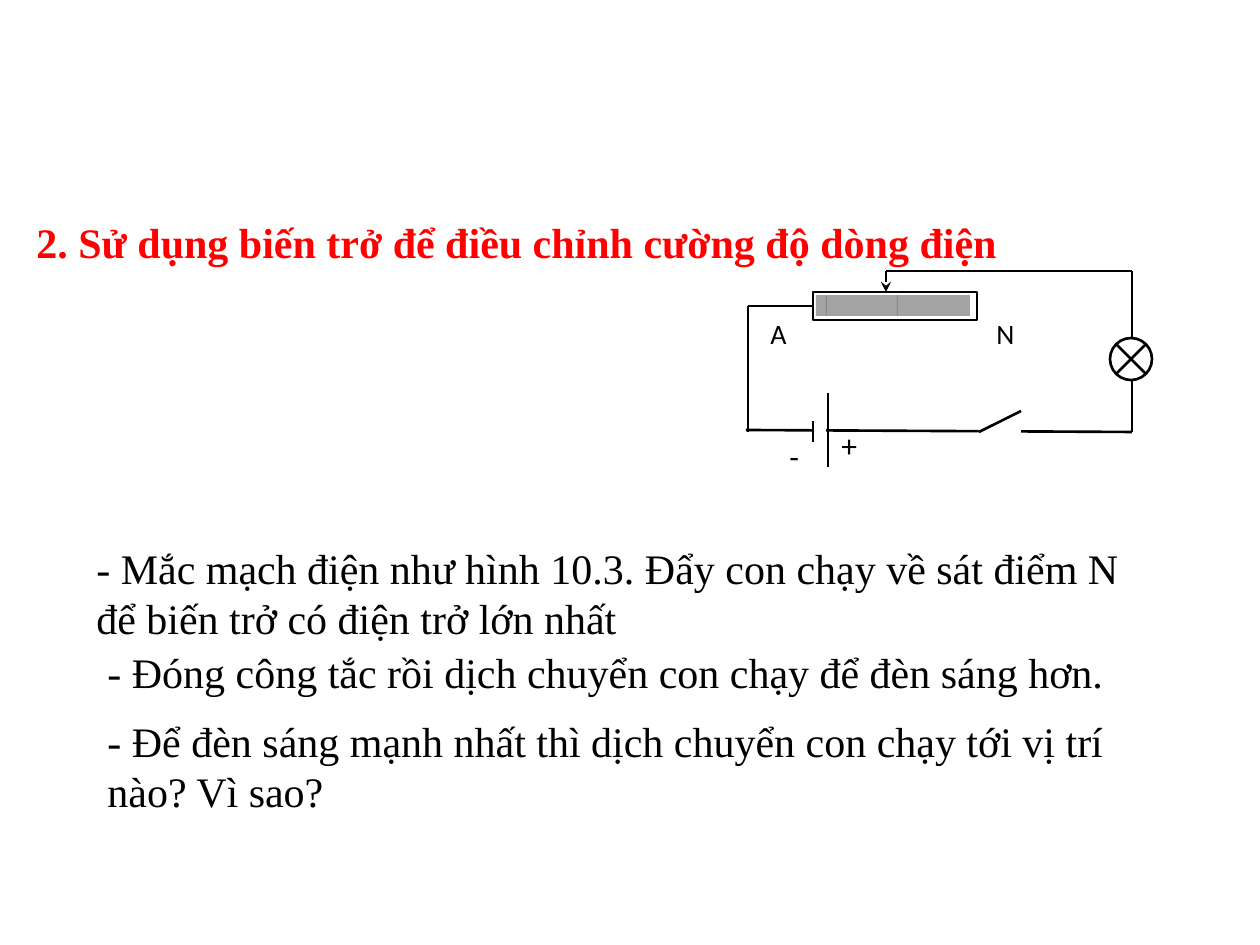
from lxml import etree
from pptx import Presentation
from pptx.dml.color import RGBColor
from pptx.enum.shapes import MSO_CONNECTOR, MSO_SHAPE
from pptx.enum.text import MSO_AUTO_SIZE
from pptx.oxml.ns import qn
from pptx.util import Pt

PX = 914400 / 126


def px(*lengths):
    return [round(length * PX) for length in lengths]


def add_text(text, box, size=24, font="Times New Roman", color="000000", bold=False, wrap=True):
    frame = slide.shapes.add_textbox(*px(*box)).text_frame
    frame.word_wrap = wrap
    frame.auto_size = MSO_AUTO_SIZE.SHAPE_TO_FIT_TEXT
    run = frame.paragraphs[0].add_run()
    run.text = text
    run.font.size = Pt(size)
    run.font.name = font
    run.font.bold = bold
    run.font.color.rgb = RGBColor.from_string(color)


prs = Presentation()
prs.slide_width, prs.slide_height = px(1260, 945)
slide = prs.slides.add_slide(prs.slide_layouts[6])

add_text("2. Sử dụng biến trở để điều chỉnh cường độ dòng điện", (24, 210, 995, 64),
         color="FF0000", bold=True, wrap=False)

LEFT, RIGHT, TOP, BOTTOM = 748, 1132, 271, 432
SLIDER, RESISTOR_MIDDLE = 886, 306

parts = {}
for part, kind, box, fill, outlined in [
    ("resistor", MSO_SHAPE.RECTANGLE, (813, 292, 164, 28), "FFFFFF", True),
    ("bottom wire", None, (746, 430, RIGHT, BOTTOM), 1.5, False),
    ("switch gap", MSO_SHAPE.RECTANGLE, (979, 421, 42, 50), "FFFFFF", False),
    ("battery gap", MSO_SHAPE.RECTANGLE, (813, 421, 13, 50), "FFFFFF", False),
    ("switch arm", None, (979, BOTTOM, 1021, 411), 1.5, False),
    ("positive plate", None, (828, 393, 828, 467), 1.5, False),
    ("negative plate", None, (813, 421, 813, 442), 1.5, False),
    ("left wire", None, (LEFT, BOTTOM, LEFT, RESISTOR_MIDDLE), 1.5, False),
    ("resistor wire", None, (LEFT, RESISTOR_MIDDLE, 813, RESISTOR_MIDDLE), 1.5, False),
    ("right wire", None, (RIGHT, BOTTOM, RIGHT, TOP), 1.5, False),
    ("lamp", MSO_SHAPE.FLOWCHART_SUMMING_JUNCTION, (1110, 338, 42, 42), "FFFFFF", True),
    ("coil start", MSO_SHAPE.RECTANGLE, (816, 295, 11, 21), "808080", False),
    ("coil middle", MSO_SHAPE.RECTANGLE, (826, 295, 72, 21), "808080", False),
    ("coil end", MSO_SHAPE.RECTANGLE, (897, 295, 73, 21), "808080", False),
    ("slider", None, (SLIDER, TOP, SLIDER, 292), 1.5, False),
    ("top wire", None, (SLIDER, TOP, RIGHT, TOP), 0.75, False),
]:
    if kind is None:
        wire = slide.shapes.add_connector(MSO_CONNECTOR.STRAIGHT, *px(*box))
        wire.line.color.rgb = RGBColor.from_string("000000")
        wire.line.width = Pt(fill)
        etree.SubElement(wire.element.spPr, qn("a:effectLst"))
        parts[part] = wire
        continue
    block = slide.shapes.add_shape(kind, *px(*box))
    block.shadow.inherit = False
    block.fill.solid()
    block.fill.fore_color.rgb = RGBColor.from_string(fill)
    if outlined:
        block.line.color.rgb = RGBColor.from_string("000000")
        block.line.width = Pt(1.5)
    else:
        block.line.fill.background()
    parts[part] = block

parts["resistor wire"].end_connect(parts["resistor"], 1)
etree.SubElement(parts["slider"].line._get_or_add_ln(), qn("a:tailEnd"), type="stealth")
for coil in ("coil start", "coil middle", "coil end"):
    gray = parts[coil].element.spPr.find(qn("a:solidFill"))[0]
    etree.SubElement(gray, qn("a:alpha"), val="72000")

for label, left, top, width, height, size in [
    ("A", 758, 310, 53, 47, 16),
    ("N", 984, 310, 53, 47, 16),
    ("+", 829, 420, 42, 50, 18),
    ("-", 777, 431, 42, 50, 18),
]:
    add_text(label, (left, top, width, height), size=size, font="Calibri")

for step, left, top, height in [
    ("- Mắc mạch điện như hình 10.3. Đẩy con chạy về sát điểm N để biến trở có điện trở lớn nhất", 84, 536, 115),
    ("- Đóng công tắc rồi dịch chuyển con chạy để đèn sáng hơn.", 95, 640, 64),
    ("- Để đèn sáng mạnh nhất thì dịch chuyển con chạy tới vị trí nào? Vì sao?", 95, 709, 115),
]:
    add_text(step, (left, top, 1092, height))

prs.save("out.pptx")
